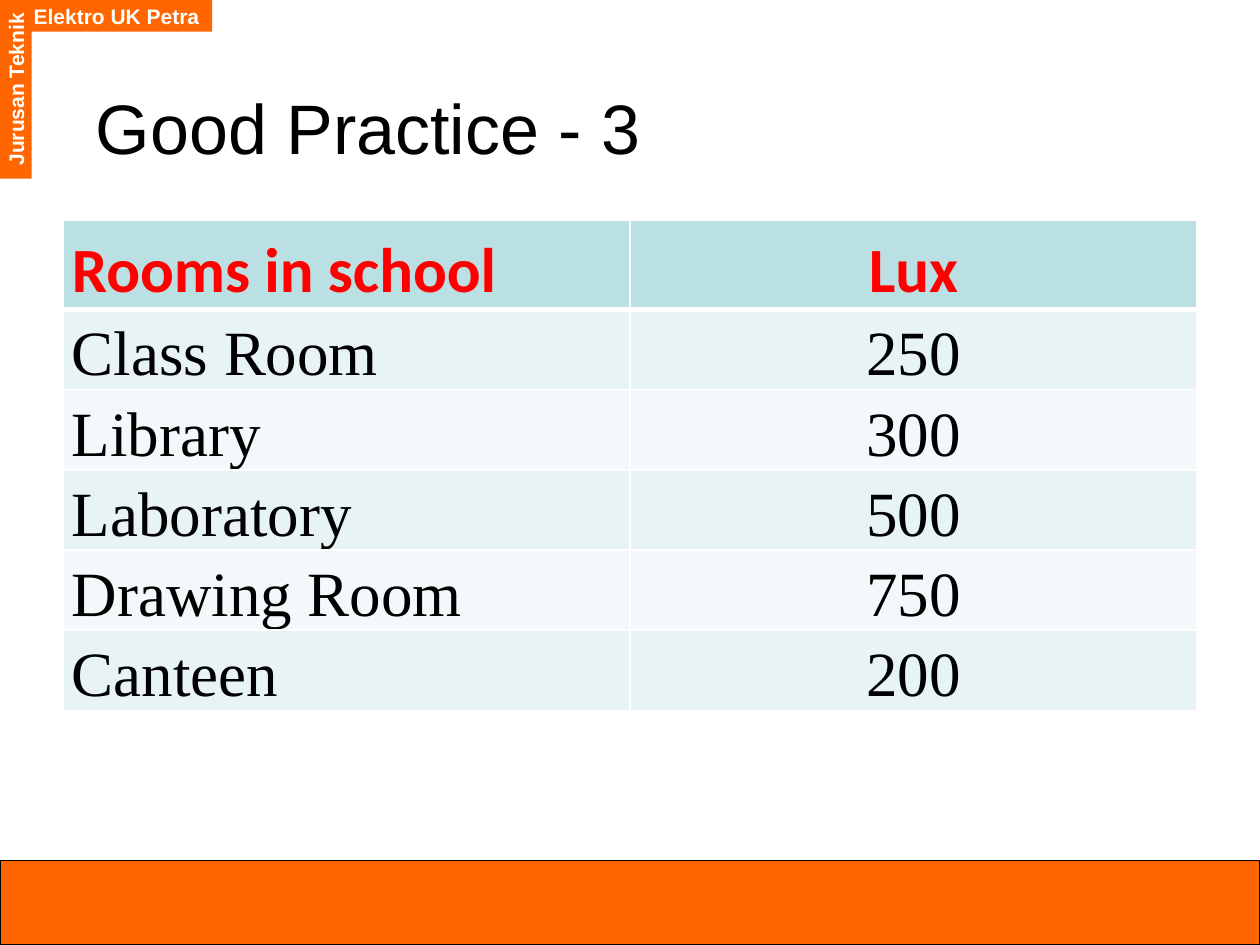
from dataclasses import dataclass

from lxml.etree import SubElement
from pptx import Presentation
from pptx.dml.color import RGBColor as Color
from pptx.enum.shapes import MSO_SHAPE as Shape
from pptx.enum.text import MSO_ANCHOR as Anchor, PP_ALIGN as Align
from pptx.oxml import parse_xml
from pptx.oxml.ns import nsdecls, qn
from pptx.util import Cm, Pt


@dataclass(frozen=True)
class Theme:
    """Colours, fonts and type sizes of the slide."""

    orange: str = "FF6600"
    white: str = "FFFFFF"
    black: str = "000000"
    red: str = "FF0000"
    header: str = "BBE0E3"
    bands: tuple = ("E7F3F4", "F3F9FA")
    sans: str = "Arial"
    header_font: str = "Calibri"
    body_font: str = "Times New Roman"
    tag_size: int = 12
    title_size: int = 40
    table_size: int = 36
    thin: int = 1
    thick: int = 3


THEME = Theme()
ROOMS = [
    ("Rooms in school", "Lux"),
    ("Class Room", "250"),
    ("Library", "300"),
    ("Laboratory", "500"),
    ("Drawing Room", "750"),
    ("Canteen", "200"),
]


def write(para, text, font, size, color, bold=False):
    """Add one formatted run to a paragraph."""
    span = para.add_run()
    span.text = text
    span.font.name = font
    span.font.size = Pt(size)
    span.font.bold = bold
    span.font.color.rgb = Color.from_string(color)


def add_bar(page, left, top, width, height):
    """Add an orange rectangle without outline or shadow."""
    bar = page.shapes.add_shape(Shape.RECTANGLE, Cm(left), Cm(top), Cm(width), Cm(height))
    bar.shadow.inherit = False
    bar.fill.solid()
    bar.fill.fore_color.rgb = Color.from_string(THEME.orange)
    bar.line.fill.background()
    return bar


def add_footer(page):
    """Add the outlined band along the bottom edge."""
    band = add_bar(page, 0, 17.35, 25.4, 1.7)
    band.line.color.rgb = Color.from_string(THEME.black)
    band.line.width = Pt(0.75)


def add_tag(page, text, left, top, width, rotation=0):
    """Add a corner tag with its label."""
    tag = add_bar(page, left, top, width, 0.64)
    tag.rotation = rotation
    frame = tag.text_frame
    frame.word_wrap = False
    frame.vertical_anchor = Anchor.MIDDLE
    para = frame.paragraphs[0]
    para.alignment = Align.CENTER
    write(para, text, THEME.sans, THEME.tag_size, THEME.white, bold=True)


def set_title(page, text):
    """Place and format the title placeholder."""
    title = page.shapes.title
    title.left, title.top, title.width, title.height = Cm(1.68), Cm(1.32), Cm(19.43), Cm(2.46)
    frame = title.text_frame
    frame.vertical_anchor = Anchor.MIDDLE
    para = frame.paragraphs[0]
    para.alignment = Align.LEFT
    write(para, text, THEME.sans, THEME.title_size, THEME.black)


def set_borders(cell, top, bottom):
    """Draw white borders with the given top and bottom widths."""
    props = cell._tc.get_or_add_tcPr()
    widths = {"lnL": THEME.thin, "lnR": THEME.thin, "lnT": top, "lnB": bottom}
    for index, (side, width) in enumerate(widths.items()):
        line = parse_xml(f'<a:{side} {nsdecls("a")} w="{Pt(width)}"/>')
        fill = SubElement(line, qn("a:solidFill"))
        SubElement(fill, qn("a:srgbClr"), val=THEME.white)
        props.insert(index, line)


def fill_cell(cell, text, row, column):
    """Format one table cell by its place in the grid."""
    is_header = row == 0
    cell.margin_left = cell.margin_right = Cm(0.18)
    cell.margin_top = cell.margin_bottom = Cm(0)
    cell.vertical_anchor = Anchor.MIDDLE if is_header and column else Anchor.BOTTOM
    cell.fill.solid()
    shade = THEME.header if is_header else THEME.bands[(row - 1) % 2]
    cell.fill.fore_color.rgb = Color.from_string(shade)
    set_borders(
        cell,
        top=THEME.thick if row == 1 else THEME.thin,
        bottom=THEME.thick if is_header else THEME.thin,
    )
    para = cell.text_frame.paragraphs[0]
    para.alignment = Align.CENTER if column else Align.LEFT
    para.line_spacing = 1.15
    font, color = (THEME.header_font, THEME.red) if is_header else (THEME.body_font, THEME.black)
    write(para, text, font, THEME.table_size, color, bold=is_header)


def add_room_table(page, rooms):
    """Add the table of recommended light levels."""
    row_height = Cm(1.04)
    frame = page.shapes.add_table(
        len(rooms), len(rooms[0]), Cm(1.27), Cm(4.45), Cm(22.86), row_height * len(rooms)
    )
    for row, values in enumerate(rooms):
        for column, text in enumerate(values):
            fill_cell(frame.table.cell(row, column), text, row, column)


def main():
    """Build and save the slide."""
    deck = Presentation()
    deck.slide_width, deck.slide_height = Cm(25.4), Cm(19.05)
    page = deck.slides.add_slide(deck.slide_layouts[5])
    add_footer(page)
    add_tag(page, "Elektro UK Petra", 0.42, 0, 3.86)
    add_tag(page, "Jurusan Teknik", -1.48, 1.48, 3.6, rotation=270)
    set_title(page, "Good Practice - 3")
    add_room_table(page, ROOMS)
    deck.save("out.pptx")


if __name__ == "__main__":
    main()
